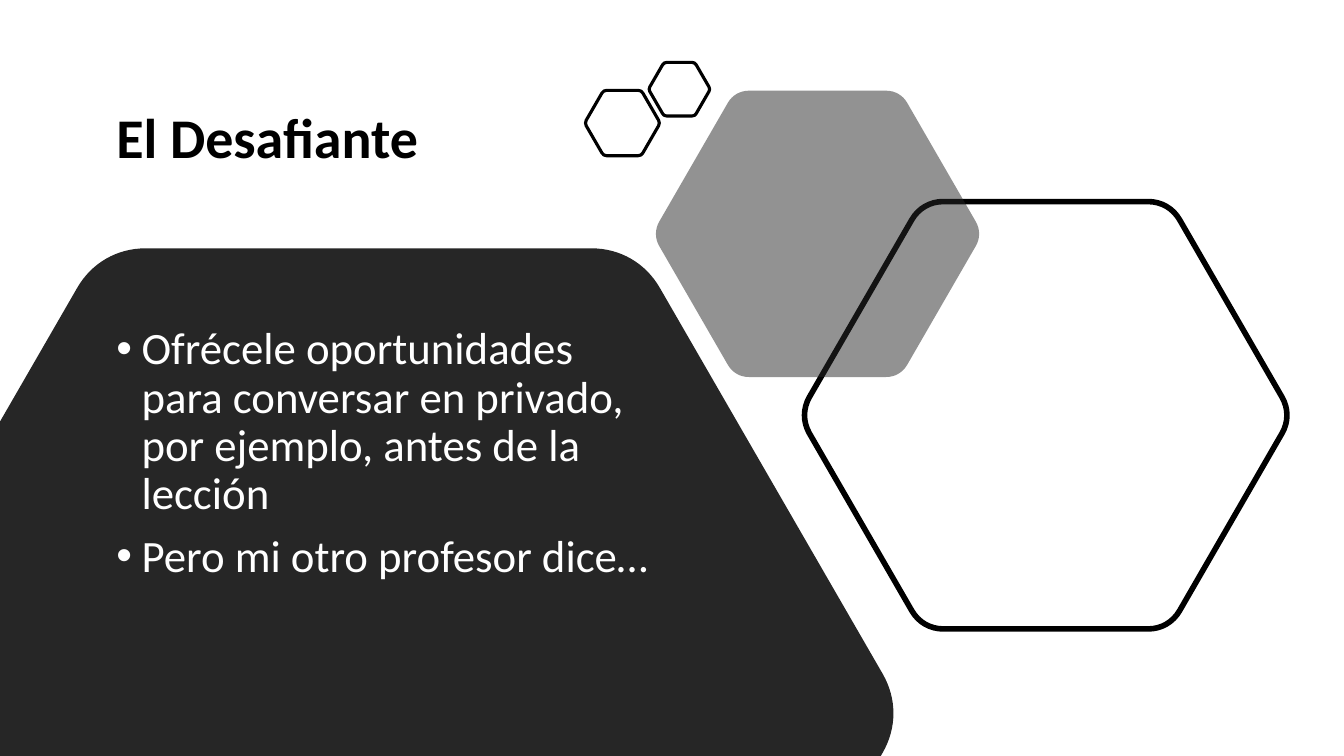
import math

import pptx
import pptx.dml.color
import pptx.enum.text
import pptx.oxml.ns
import pptx.util
from lxml import etree

WIDTH = pptx.util.Inches(13.333)
HEIGHT = pptx.util.Inches(7.5)
COLUMN = WIDTH / 100
ROW = HEIGHT / 100
FONT = "Calibri"
BLACK, CHARCOAL, WHITE = "000000", "262626", "FFFFFF"
CORNER_CUT = 0.085  # share of a hexagon's side that each rounded corner takes
CURVE_PULL = 0.63  # how far the curve handles reach towards the sharp corner


def color(value):
    return pptx.dml.color.RGBColor.from_string(value)


def between(start, end, share):
    return tuple(a + share * (b - a) for a, b in zip(start, end))


def rounded_hexagon(column, row, radius):
    """Outline as (point, is_handle) pairs, with the radius in columns."""
    corners = []
    for number in range(6):
        angle = math.radians(60 * number)
        corners.append((column * COLUMN + radius * COLUMN * math.cos(angle),
                        row * ROW + radius * COLUMN * math.sin(angle)))
    outline = []
    for number, corner in enumerate(corners):
        enter = between(corner, corners[number - 1], CORNER_CUT)
        leave = between(corner, corners[(number + 1) % 6], CORNER_CUT)
        outline += [(enter, False),
                    (between(enter, corner, CURVE_PULL), True),
                    (between(leave, corner, CURVE_PULL), True),
                    (leave, False)]
    return outline


def clip(outline, axis, limit, side):
    """Keep the part of an outline above (side 1) or below (side -1) a limit."""
    kept = []
    for start, end in zip(outline, outline[1:] + outline[:1]):
        start_gap = side * (start[0][axis] - limit)
        end_gap = side * (end[0][axis] - limit)
        if start_gap >= 0:
            kept.append(start)
        if start_gap * end_gap < 0:
            share = start_gap / (start_gap - end_gap)
            kept.append((between(start[0], end[0], share), False))
    return kept


def round_corners(shape, handles):
    """Join each pair of handles and the point after them into one curve."""
    lines = shape._element.findall(".//" + pptx.oxml.ns.qn("a:lnTo"))
    for index in range(len(handles) - 2):
        if handles[index] and handles[index + 1]:
            curve = etree.Element(pptx.oxml.ns.qn("a:cubicBezTo"))
            lines[index].addprevious(curve)
            for line in lines[index:index + 3]:
                curve.append(line[0])
                line.getparent().remove(line)


def add_hexagon(page, column, row, radius, fill=None, opacity=100, line=None):
    outline = rounded_hexagon(column, row, radius)
    outline = clip(clip(outline, 0, 0, 1), 1, HEIGHT, -1)
    points = [(round(x), round(y)) for (x, y), handle in outline]
    builder = page.shapes.build_freeform(*points[0])
    builder.add_line_segments(points[1:], close=True)
    shape = builder.convert_to_shape()
    round_corners(shape, [handle for point, handle in outline[1:]])
    shape.shadow.inherit = False
    if fill:
        shape.fill.solid()
        shape.fill.fore_color.rgb = color(fill)
        if opacity < 100:
            swatch = shape._element.find(".//" + pptx.oxml.ns.qn("a:srgbClr"))
            alpha = etree.SubElement(swatch, pptx.oxml.ns.qn("a:alpha"))
            alpha.set("val", str(opacity * 1000))
    else:
        shape.fill.background()
    if line:
        shape.line.color.rgb = color(BLACK)
        shape.line.width = pptx.util.Pt(line)
    else:
        shape.line.fill.background()


def add_bullet(para):
    properties = para._p.get_or_add_pPr()
    indent = pptx.util.Inches(0.25)
    properties.set("marL", str(indent))
    properties.set("indent", str(-indent))
    font = etree.SubElement(properties, pptx.oxml.ns.qn("a:buFont"))
    font.set("typeface", "Arial")
    bullet = etree.SubElement(properties, pptx.oxml.ns.qn("a:buChar"))
    bullet.set("char", "•")


def add_text(page, column, row, columns, rows, lines, size, ink,
             bold=False, bullets=False, middle=False):
    box = page.shapes.add_textbox(round(column * COLUMN), round(row * ROW),
                                  round(columns * COLUMN), round(rows * ROW))
    frame = box.text_frame
    frame.word_wrap = True
    anchors = pptx.enum.text.MSO_ANCHOR
    frame.vertical_anchor = anchors.MIDDLE if middle else anchors.TOP
    for number, line in enumerate(lines):
        para = frame.add_paragraph() if number else frame.paragraphs[0]
        para.line_spacing = 0.9
        if bullets:
            para.space_before = pptx.util.Pt(10)
            add_bullet(para)
        span = para.add_run()
        span.text = line
        span.font.name = FONT
        span.font.size = pptx.util.Pt(size)
        span.font.bold = bold
        span.font.color.rgb = color(ink)


def main():
    deck = pptx.Presentation()
    deck.slide_width, deck.slide_height = WIDTH, HEIGHT
    page = deck.slides.add_slide(deck.slide_layouts[6])

    # Title
    add_text(page, 7.92, 6.53, 35.1, 24, ["El Desafiante"], 40, BLACK,
             bold=True, middle=True)

    # Hexagons, from back to front
    add_hexagon(page, 27.42, 94.35, 39.95, fill=CHARCOAL)
    add_hexagon(page, 77.81, 54.93, 18.36, line=4)
    add_hexagon(page, 60.83, 30.93, 12.3, fill=CHARCOAL, opacity=50)
    add_hexagon(page, 46.31, 16.28, 2.81, line=2.25)
    add_hexagon(page, 50.55, 11.8, 2.3, line=2.25)

    # Advice
    add_text(page, 7.92, 42.47, 42.08, 45.47, [
        "Ofrécele oportunidades para conversar en privado, por ejemplo, "
        "antes de la lección",
        "Pero mi otro profesor dice…",
    ], 32, WHITE, bullets=True)

    deck.save("out.pptx")


if __name__ == "__main__":
    main()
